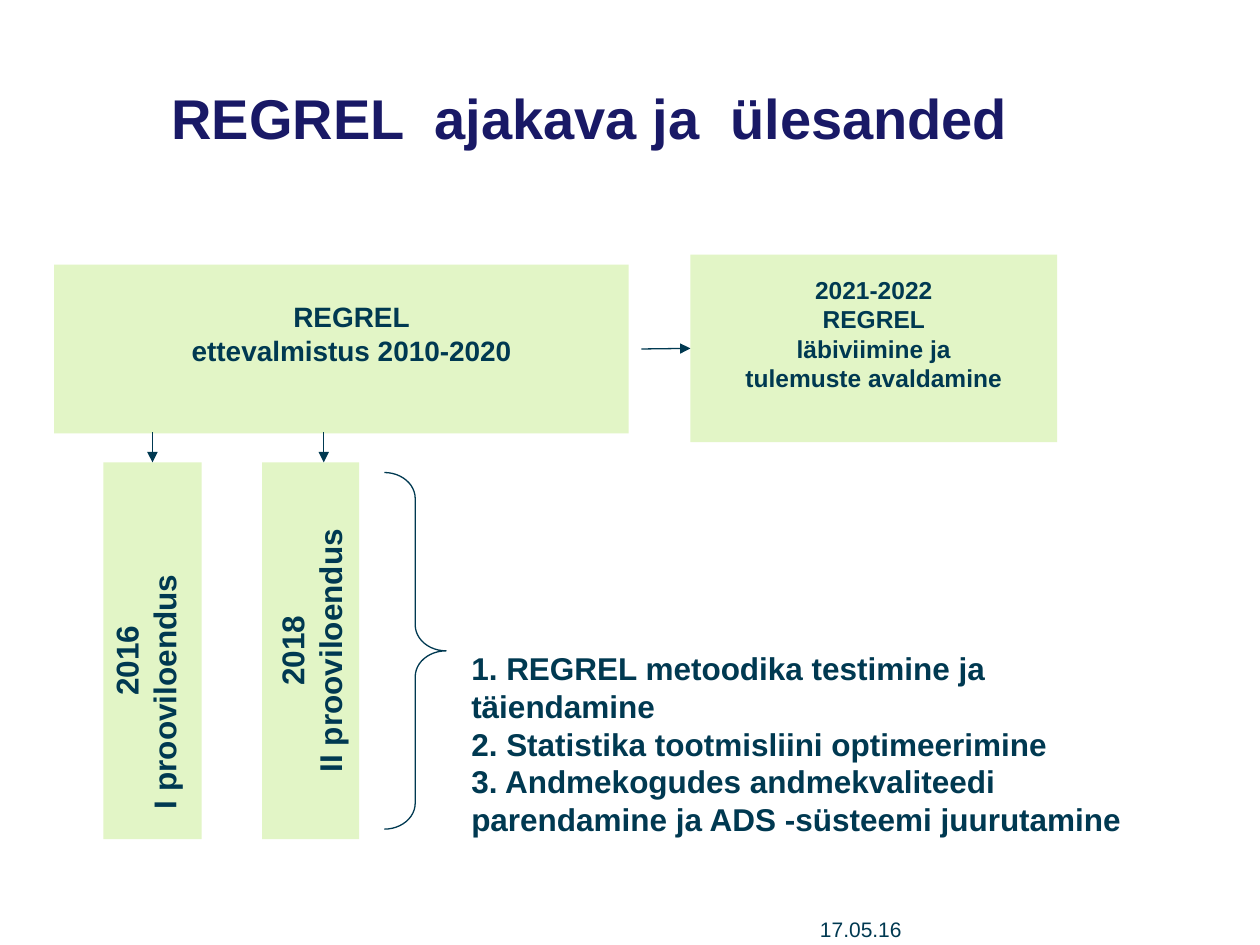
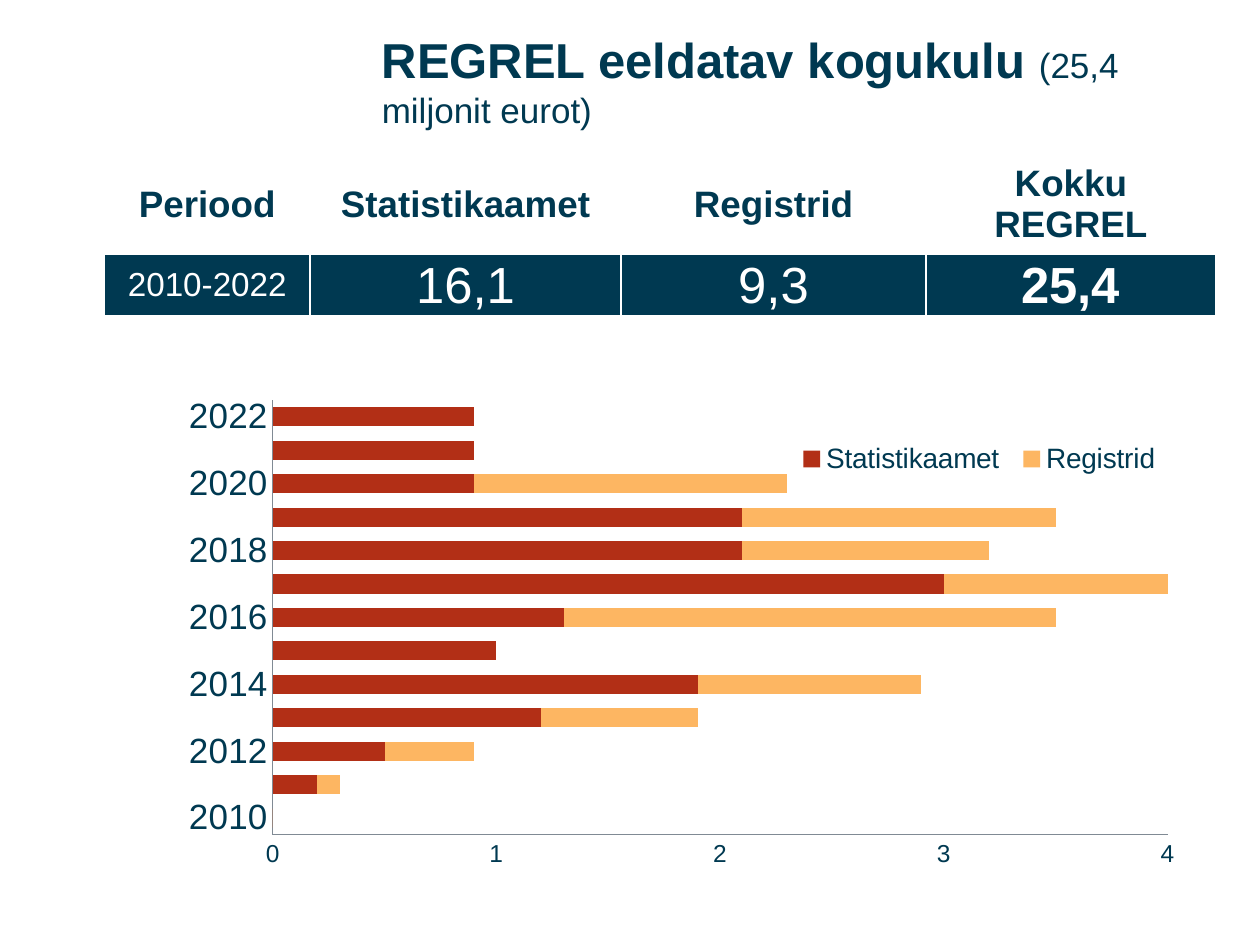
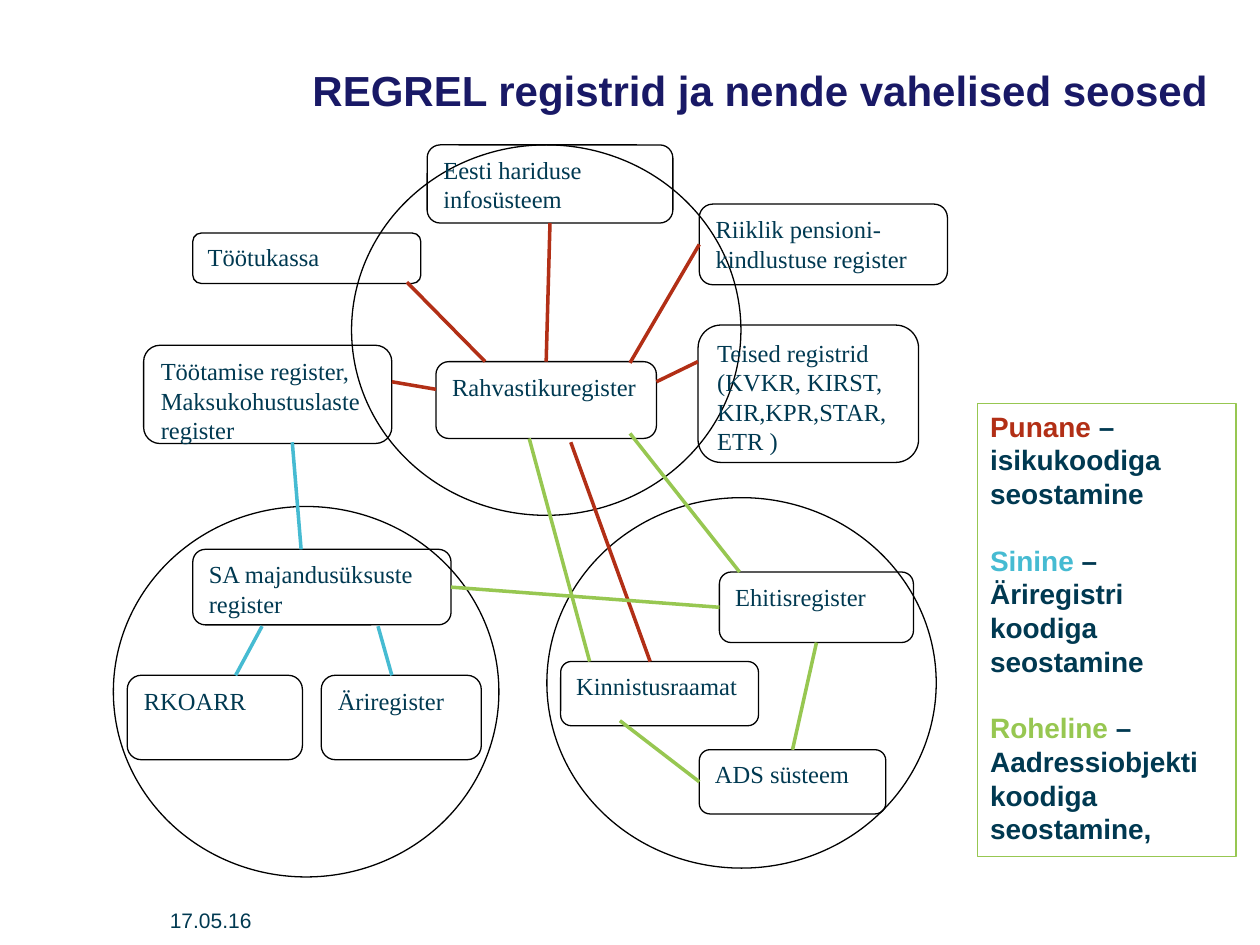
from lxml.etree import SubElement
from pptx import Presentation
from pptx.chart.data import CategoryChartData
from pptx.dml.color import RGBColor
from pptx.enum.chart import XL_CHART_TYPE, XL_LEGEND_POSITION, XL_TICK_MARK
from pptx.enum.shapes import MSO_CONNECTOR, MSO_SHAPE
from pptx.enum.text import MSO_ANCHOR, MSO_AUTO_SIZE, PP_ALIGN
from pptx.oxml.ns import qn
from pptx.util import Inches, Pt

COLORS = {
    "text": "003951",
    "title": "191966",
    "panel": "E2F5C6",
    "red": "B22F16",
    "blue": "46BBD2",
    "green": "97C751",
    "orange": "FDB662",
    "axis": "808A94",
    "black": "000000",
    "white": "FFFFFF",
}
TITLE_AND_CONTENT, TITLE_ONLY = 1, 5
TOP, LEFT, BOTTOM, RIGHT = range(4)


def rgb(name):
    """Return the named palette colour."""
    return RGBColor.from_string(COLORS[name])


def inches(values):
    """Convert a sequence of numbers to lengths."""
    return [Inches(value) for value in values]


def set_insets(frame, insets):
    """Set the left, top, right and bottom insets of a frame or cell."""
    (frame.margin_left, frame.margin_top,
     frame.margin_right, frame.margin_bottom) = inches(insets)


def set_layout(parent, index, box, inner=False):
    """Place a chart part by fractions of the chart's area."""
    old = parent.find(qn("c:layout"))
    if old is not None:
        parent.remove(old)
    layout = parent.makeelement(qn("c:layout"), {})
    parent.insert(index, layout)
    manual = SubElement(layout, qn("c:manualLayout"))
    settings = [("layoutTarget", "inner")] if inner else []
    settings += [("xMode", "edge"), ("yMode", "edge"), *zip("xywh", box)]
    for tag, value in settings:
        SubElement(manual, qn(f"c:{tag}")).set("val", str(value))


class Deck:
    """Hold the shared style and the slide being built."""

    def __init__(self):
        """Start an empty presentation."""
        self.presentation = Presentation()
        self.presentation.slide_width = Inches(10)
        self.presentation.slide_height = Inches(7.5)
        self.slide = None

    def new_slide(self, layout):
        """Add a slide and make it current."""
        layouts = self.presentation.slide_layouts
        self.slide = self.presentation.slides.add_slide(layouts[layout])

    def style_font(self, font, size=None, color=None, bold=None, name=None):
        """Apply the given font settings."""
        if name:
            font.name = name
        if size:
            font.size = Pt(size)
        if color:
            font.color.rgb = rgb(color)
        if bold is not None:
            font.bold = bold

    def fill_text(self, frame, paragraphs, size, color="text", bold=False, name="Arial",
                  align=PP_ALIGN.LEFT, anchor=MSO_ANCHOR.TOP, gap=0, indents=None):
        """Fill a frame with strings or with lists of (text, font settings) runs."""
        frame.word_wrap = True
        frame.auto_size = MSO_AUTO_SIZE.NONE
        frame.vertical_anchor = anchor
        for index, content in enumerate(paragraphs):
            paragraph = frame.paragraphs[0] if index == 0 else frame.add_paragraph()
            paragraph.alignment = align
            paragraph.space_before = Pt(gap if index else 0)
            if indents:
                properties = paragraph._p.get_or_add_pPr()
                properties.set("marL", str(Inches(indents[index])))
                properties.set("indent", "0")
                SubElement(properties, qn("a:buNone"))
            self.style_font(paragraph.font, size, color, bold, name)
            runs = [(content, {})] if isinstance(content, str) else content
            for text, settings in runs:
                run = paragraph.add_run()
                run.text = text
                self.style_font(run.font, **settings)

    def placeholder(self, index, box, paragraphs, size, **style):
        """Move and fill a template placeholder."""
        holder = self.slide.placeholders[index]
        holder.left, holder.top, holder.width, holder.height = inches(box)
        self.fill_text(holder.text_frame, paragraphs, size, bold=True, **style)
        return holder

    def title(self, box, content, size, color="title"):
        """Fill the slide title."""
        title = self.placeholder(0, box, [content], size, color=color,
                                 anchor=MSO_ANCHOR.MIDDLE)
        set_insets(title.text_frame, (0, 0, 0, 0))

    def text(self, box, paragraphs, size, rotation=0, **style):
        """Add a text box."""
        textbox = self.slide.shapes.add_textbox(*inches(box))
        textbox.rotation = rotation
        self.fill_text(textbox.text_frame, paragraphs, size, **style)

    def date(self, box):
        """Add the date at the foot of the slide."""
        self.text(box, ["17.05.16"], 12, anchor=MSO_ANCHOR.MIDDLE)

    def shape(self, kind, box, fill=None, line=None, rotation=0):
        """Add a flat preset shape."""
        shape = self.slide.shapes.add_shape(kind, *inches(box))
        shape.shadow.inherit = False
        shape.rotation = rotation
        if fill:
            shape.fill.solid()
            shape.fill.fore_color.rgb = rgb(fill)
        else:
            shape.fill.background()
        if line:
            shape.line.color.rgb = rgb(line)
            shape.line.width = Pt(0.75)
        else:
            shape.line.fill.background()
        return shape

    def panel(self, box, paragraphs=(), size=18, insets=(0.1, 0.05, 0.1, 0.05),
              anchor=MSO_ANCHOR.MIDDLE, rotation=0):
        """Add a light green panel with centred bold text."""
        panel = self.shape(MSO_SHAPE.RECTANGLE, box, fill="panel", rotation=rotation)
        set_insets(panel.text_frame, insets)
        self.fill_text(panel.text_frame, paragraphs, size, bold=True,
                       align=PP_ALIGN.CENTER, anchor=anchor)
        return panel

    def register(self, label, box):
        """Add a rounded box that names a register."""
        register = self.shape(MSO_SHAPE.ROUNDED_RECTANGLE, box, line="black")
        self.fill_text(register.text_frame, [label], 14, name="Times New Roman")
        return register

    def link(self, start, end, color, width=2, arrow=False):
        """Draw a line between points (x, y) or joined sides (shape, site)."""
        link = self.slide.shapes.add_connector(MSO_CONNECTOR.STRAIGHT, 0, 0, 0, 0)
        if isinstance(start[0], (int, float)):
            link.begin_x, link.begin_y = inches(start)
        else:
            link.begin_connect(*start)
        if isinstance(end[0], (int, float)):
            link.end_x, link.end_y = inches(end)
        else:
            link.end_connect(*end)
        link.line.color.rgb = rgb(color)
        link.line.width = Pt(width)
        properties = link.element.spPr
        if arrow:
            SubElement(properties.find(qn("a:ln")), qn("a:tailEnd")).set("type", "triangle")
        SubElement(properties, qn("a:effectLst"))

    def table(self, box, widths, heights, rows):
        """Add a table from rows of (text, size, bold, colour, fill, insets)."""
        frame = self.slide.shapes.add_table(len(rows), len(widths), *inches(box))
        table = frame.table
        for column, width in zip(table.columns, widths):
            column.width = Inches(width)
        for row, height, entries in zip(table.rows, heights, rows):
            row.height = Inches(height)
            for cell, (text, size, bold, color, fill, insets) in zip(row.cells, entries):
                cell.fill.solid()
                cell.fill.fore_color.rgb = rgb(fill)
                set_insets(cell, insets)
                cell.vertical_anchor = MSO_ANCHOR.MIDDLE
                paragraph = cell.text_frame.paragraphs[0]
                paragraph.alignment = PP_ALIGN.CENTER
                self.style_font(paragraph.font, size, color, bold, "Arial")
                paragraph.add_run().text = text

    def stacked_bars(self, box, categories, series):
        """Add a stacked bar chart from (name, colour, values) series."""
        data = CategoryChartData()
        data.categories = categories
        for name, _, values in series:
            data.add_series(name, values)
        chart = self.slide.shapes.add_chart(
            XL_CHART_TYPE.BAR_STACKED, *inches(box), data).chart
        chart.has_title = False
        self.style_font(chart.font, 10, "text", name="Arial")
        plot = chart.plots[0]
        plot.gap_width, plot.overlap, plot.vary_by_categories = 75, 100, False
        for bars, (_, color, _) in zip(plot.series, series):
            bars.format.fill.solid()
            bars.format.fill.fore_color.rgb = rgb(color)
        for axis, size in ((chart.category_axis, 20), (chart.value_axis, 14)):
            axis.has_major_gridlines = False
            axis.major_tick_mark = axis.minor_tick_mark = XL_TICK_MARK.NONE
            axis.format.line.color.rgb = rgb("axis")
            self.style_font(axis.tick_labels.font, size, "text", name="Arial")
        values = chart.value_axis
        values.minimum_scale, values.maximum_scale, values.major_unit = 0, 4, 1
        chart.has_legend = True
        legend = chart.legend
        legend.position = XL_LEGEND_POSITION.TOP
        legend.include_in_layout = False
        self.style_font(legend.font, 16, "text", name="Arial")
        plot_area = chart.element.find(".//" + qn("c:plotArea"))
        set_layout(plot_area, 0, (0.15, 0.064, 0.798, 0.747), inner=True)
        set_layout(chart.element.find(".//" + qn("c:legend")), 1, (0.61, 0.13, 0.34, 0.07))


def build_schedule(deck):
    """Build the timetable slide."""
    deck.new_slide(TITLE_AND_CONTENT)
    deck.title((1.36, 0.68, 8.22, 0.5), "REGREL  ajakava ja  ülesanded", 32)
    deck.date((6.41, 7.25, 3.17, 0.25))
    deck.panel((0.43, 2.1, 4.56, 1.34), ["REGREL", "ettevalmistus 2010-2020"], 16,
               insets=(0.26, 0.28, 0.1, 0.05), anchor=MSO_ANCHOR.TOP)
    first_census = deck.panel((0.82, 3.67, 0.78, 2.99))
    deck.text((-0.34, 4.81, 2.99, 0.71), ["2016", "I prooviloendus"], 18,
              rotation=270, bold=True, indents=(1.04, 0.14))
    deck.panel((0.97, 4.78, 2.99, 0.77), ["2018", "II prooviloendus"], rotation=270)
    results = deck.panel(
        (5.48, 2.02, 2.91, 1.49),
        ["2021-2022", "REGREL", "läbiviimine ja", "tulemuste avaldamine"], 14,
        insets=(0.1, 0.05, 0.1, 0.28))
    for start, end in (((1.21, 3.43), (first_census, TOP)),
                       ((2.57, 3.43), (2.57, 3.67)),
                       ((5.09, 2.77), (results, LEFT))):
        deck.link(start, end, "text", 0.75, arrow=True)
    brace = deck.shape(MSO_SHAPE.LEFT_BRACE, (3.05, 3.75, 0.49, 2.83),
                       line="text", rotation=180)
    brace.adjustments[0] = 0.42
    tasks = [
        "1. REGREL metoodika testimine ja täiendamine",
        "2. Statistika tootmisliini optimeerimine",
        "3. Andmekogudes andmekvaliteedi parendamine ja ADS -süsteemi juurutamine",
    ]
    deck.placeholder(1, (3.64, 5.1, 5.38, 1.92), tasks, 18, indents=(0, 0, 0))


def build_cost(deck):
    """Build the cost slide."""
    deck.new_slide(TITLE_ONLY)
    deck.title((3.03, 0.28, 6.38, 0.71),
               [("REGREL eeldatav kogukulu ", {}),
                ("(25,4 miljonit eurot)", {"size": 20, "bold": False})], 28, "text")
    padded, tight = (0.1, 0.07, 0.1, 0.07), (0, 0, 0, 0)
    headings = ["Periood", "Statistikaamet", "Registrid", "Kokku REGREL"]
    header = [(heading, 21, True, "text", "white", padded) for heading in headings]
    amounts = [("2010-2022", 19, False, "white", "text", padded)]
    amounts += [(amount, 29, amount == "25,4", "white", "text", tight)
                for amount in ("16,1", "9,3", "25,4")]
    deck.table((0.83, 1.23, 8.82, 1.26), (1.63, 2.47, 2.42, 2.3), (0.77, 0.49),
               [header, amounts])
    deck.stacked_bars(
        (0.83, 2.88, 8.9, 4.62), [str(year) for year in range(2010, 2023)],
        [("Statistikaamet", "red",
          (0, 0.2, 0.5, 1.2, 1.9, 1, 1.3, 3, 2.1, 2.1, 0.9, 0.9, 0.9)),
         ("Registrid", "orange",
          (0, 0.1, 0.4, 0.7, 1, 0, 2.2, 1, 1.1, 1.4, 1.4, 0, 0))])


def build_registers(deck):
    """Build the slide of registers and their links."""
    deck.new_slide(TITLE_ONLY)
    deck.title((2.48, 0.36, 7.32, 0.71), "REGREL registrid ja nende vahelised seosed", 24)
    deck.date((1.25, 7.1, 2.33, 0.4))
    for group in ((2.79, 1.15, 3.09, 2.94), (0.9, 4.02, 3.06, 2.94),
                  (4.34, 3.95, 3.09, 2.94)):
        deck.shape(MSO_SHAPE.OVAL, group, line="black")

    education = deck.register("Eesti hariduse infosüsteem", (3.39, 1.15, 1.95, 0.62))
    pension = deck.register("Riiklik pensioni-kindlustuse register",
                            (5.55, 1.62, 1.97, 0.64))
    population = deck.register("Rahvastikuregister", (3.46, 2.87, 1.75, 0.61))
    economic_units = deck.register("SA majandusüksuste register", (1.53, 4.36, 2.05, 0.6))
    buildings = deck.register("Ehitisregister", (5.71, 4.54, 1.54, 0.56))
    addresses = deck.register("ADS süsteem", (5.55, 5.95, 1.48, 0.51))
    for label, box in (
        ("Töötukassa", (1.53, 1.85, 1.81, 0.4)),
        ("Töötamise register, Maksukohustuslaste register", (1.14, 2.74, 1.97, 0.78)),
        ("Teised registrid (KVKR, KIRST, KIR,KPR,STAR, ETR )", (5.54, 2.58, 1.75, 1.09)),
        ("RKOARR", (1.01, 5.36, 1.39, 0.67)),
        ("Äriregister", (2.55, 5.36, 1.27, 0.67)),
        ("Kinnistusraamat", (4.45, 5.25, 1.57, 0.51)),
    ):
        deck.register(label, box)

    links = {
        "red": [
            ((3.11, 3.03), (3.46, 3.09)),
            ((3.23, 2.24), (3.85, 2.87)),
            ((education, BOTTOM), (population, TOP)),
            ((5, 2.88), (pension, LEFT)),
            ((5.21, 3.03), (5.54, 2.87)),
            ((4.53, 3.51), (5.16, 5.25)),
        ],
        "blue": [
            ((2.32, 3.51), (2.39, 4.36)),
            ((3, 4.97), (3.11, 5.36)),
            ((2.08, 4.97), (1.87, 5.36)),
        ],
        "green": [
            ((5.87, 4.54), (5, 3.44)),
            ((4.2, 3.48), (4.68, 5.25)),
            ((economic_units, RIGHT), (buildings, LEFT)),
            ((addresses, TOP), (buildings, BOTTOM)),
            ((addresses, LEFT), (4.92, 5.72)),
        ],
    }
    for color, ends in links.items():
        for start, end in ends:
            deck.link(start, end, color)

    key = deck.shape(MSO_SHAPE.RECTANGLE, (7.76, 3.2, 2.05, 3.6), line="green")
    meanings = (("Punane ", "red", "– isikukoodiga seostamine"),
                ("Sinine ", "blue", "– Äriregistri koodiga seostamine"),
                ("Roheline ", "green", "– Aadressiobjekti koodiga seostamine,"))
    deck.fill_text(key.text_frame,
                   [[(name, {"color": color}), (meaning, {})]
                    for name, color, meaning in meanings], 16, bold=True, gap=19)


def main():
    """Build and save the presentation."""
    deck = Deck()
    build_schedule(deck)
    build_cost(deck)
    build_registers(deck)
    deck.presentation.save("out.pptx")


if __name__ == "__main__":
    main()
